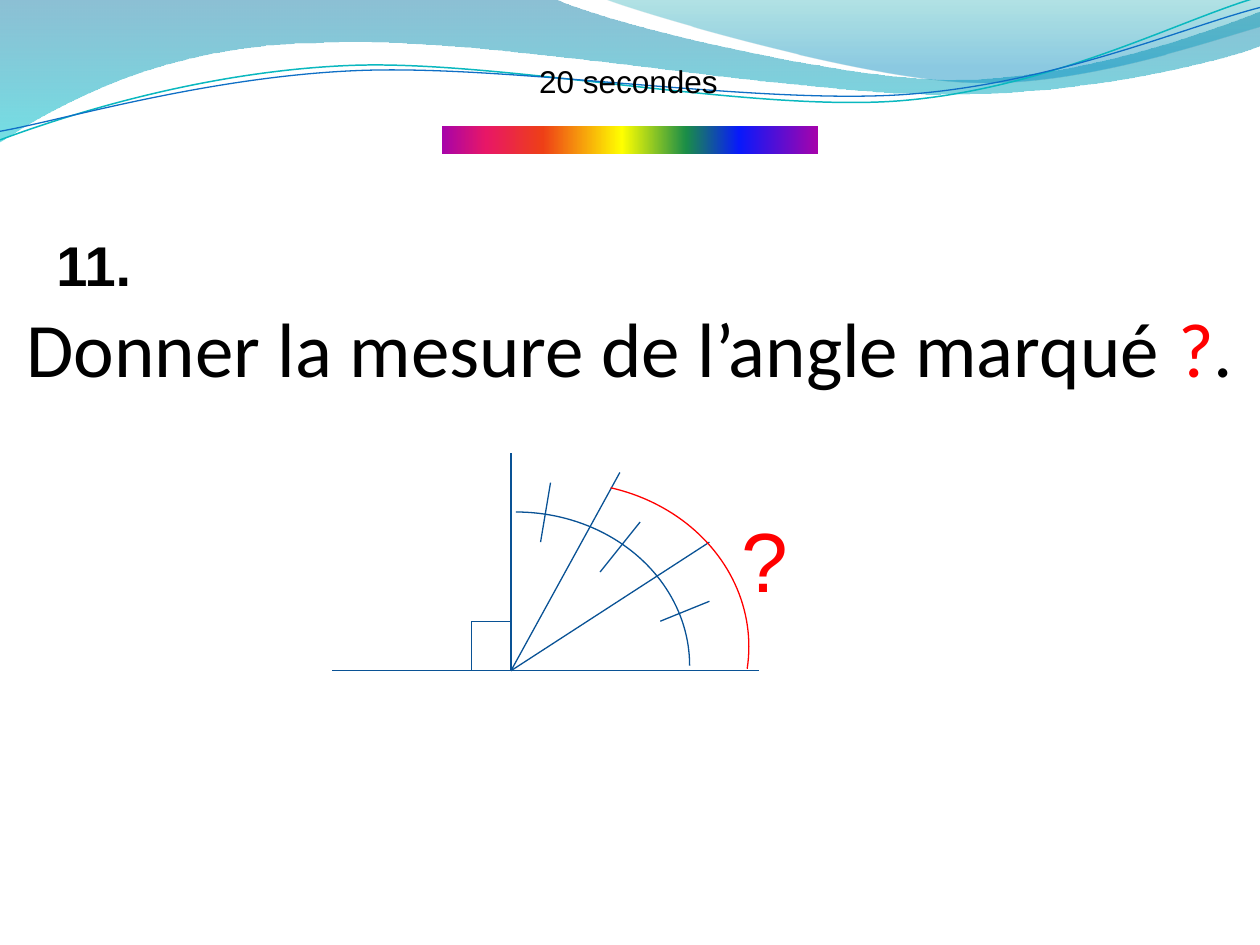
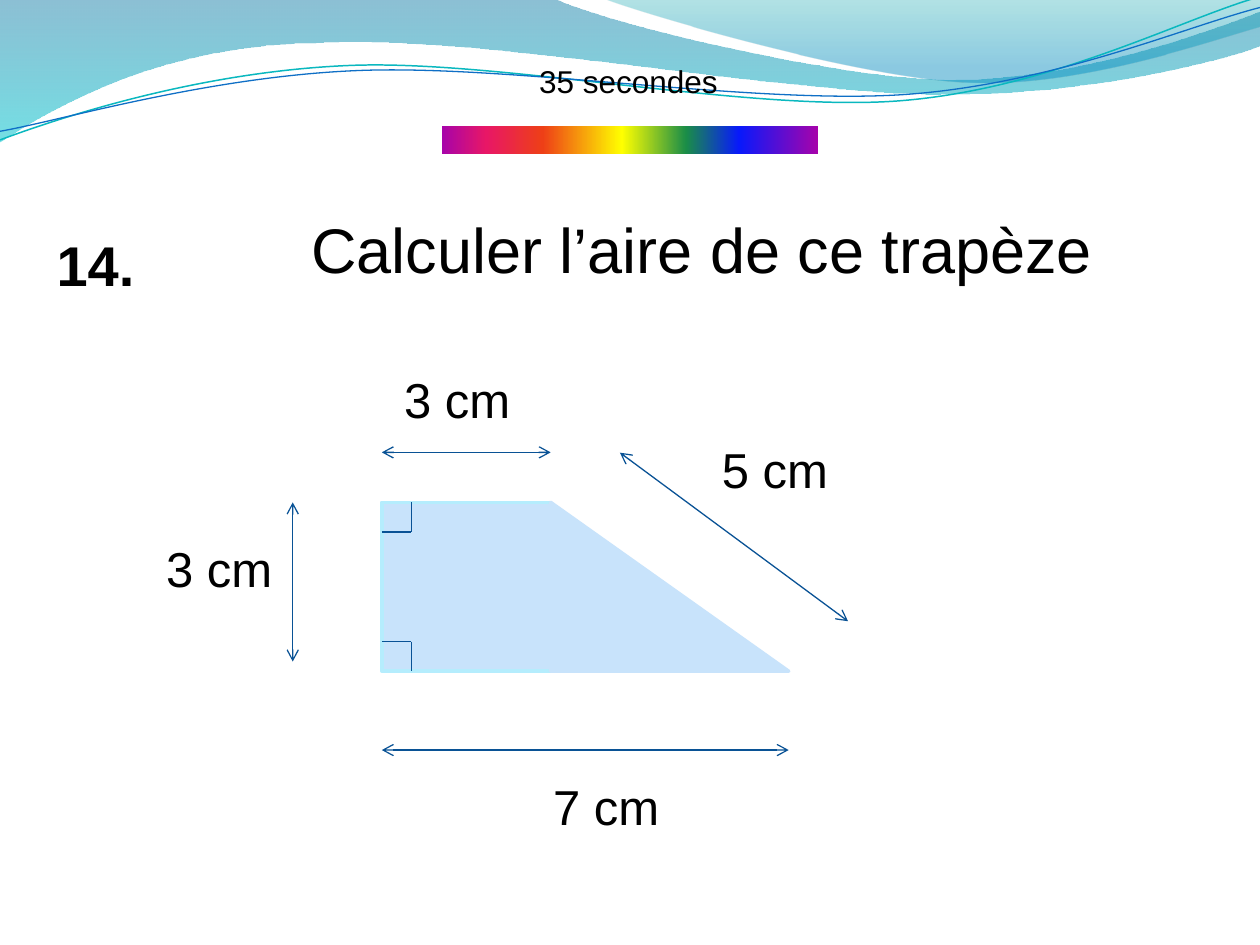
from dataclasses import dataclass
from typing import Any, Optional

import lxml.etree
import pptx
import pptx.dml.color
import pptx.enum.shapes
import pptx.enum.text
import pptx.oxml.ns
import pptx.util

Pt = pptx.util.Pt
Shapes = pptx.enum.shapes.MSO_SHAPE
Align = pptx.enum.text.PP_ALIGN
qn = pptx.oxml.ns.qn

BLACK = "000000"
RED = "FF0000"
NAVY = "095295"
PALE_BLUE = "C8E3FB"
PALE_CYAN = "B5EDFD"
WAVE_TILT = 357.3


@dataclass(frozen=True)
class Stop:
    percent: int
    tone: str
    opacity: int = 100


@dataclass(frozen=True)
class Wave:
    start: tuple[float, float]
    segments: list[tuple[float, ...]]
    stops: Optional[list[Stop]] = None
    line: str = NAVY
    weight: float = 0.75


@dataclass(frozen=True)
class Label:
    spans: list[tuple[str, str]]
    left: float
    top: float
    width: float
    height: float
    size: float
    font: str = "Arial"
    bold: bool = False
    align: Align = Align.LEFT


@dataclass(frozen=True)
class Stroke:
    start: tuple[float, float]
    end: tuple[float, float]
    arrows: bool = False


@dataclass(frozen=True)
class Figure:
    kind: Shapes
    left: float
    top: float
    width: float
    height: float
    line: str
    weight: float = 0.75
    fill: Optional[str] = None
    stops: Optional[list[Stop]] = None
    adjustments: tuple[float, ...] = ()


BANDS = [
    Wave((0, -0.7), [
        (316.8, -0.7),
        (342.7, 12.2, 478.1, 45.4, 545.8, 45.4),
        (614.2, 45.4, 689.8, 18.7, 720, 6.5),
        (720.7, 25.9),
        (707.8, 31.7, 626.4, 54.7, 537.1, 54),
        (447.8, 54, 275, 20.2, 185, 24.5),
        (92.9, 25.2, 33.1, 59.8, -0.7, 81.4),
        (0, -0.7),
    ], [Stop(0, "0074A1", 45), Stop(100, "00C6CF", 55)]),
    Wave((344.9, -0.7), [
        (366.5, 7.9, 491, 44.6, 553.7, 46.8),
        (616.3, 49.7, 691.9, 23, 720, 15.1),
        (720, 0),
        (344.9, -0.7),
    ], [Stop(0, "00A1A9", 30), Stop(80, "008BBF", 45)]),
]
RIPPLES = [
    Wave((-1.4, 63), [
        (33.8, 51.7, 114.1, 29.4, 199.8, 29.9),
        (284.9, 30.3, 425.8, 67.3, 512.4, 64.9),
        (599, 62.4, 676.5, 25.7, 720.2, 15.5),
    ], line="0AB8BF", weight=0.85),
    Wave((-1.1, 58), [
        (32.9, 53.8, 118.3, 32.5, 204.1, 33),
        (290.6, 33.4, 428.9, 63.1, 515.5, 61.4),
        (601.3, 59.6, 678.5, 30.1, 721.4, 21.3),
    ], line="0F6FC6"),
]
RAINBOW = [
    Stop(0, "A603AB"), Stop(12, "E81766"), Stop(27, "EE3F17"), Stop(48, "FFFF00"),
    Stop(65, "1A8D48"), Stop(79, "0819FB"), Stop(100, "A603AB"),
]
TIMER_BAR = Figure(Shapes.RECTANGLE, 252, 71.5, 215.6, 17, "FFFFFF", stops=RAINBOW)


def colour(code: str) -> pptx.dml.color.RGBColor:
    return pptx.dml.color.RGBColor.from_string(code)


def fill_gradient(shape: Any, stops: list[Stop], angle: float) -> None:
    shape.fill.gradient()
    shape.fill.gradient_angle = angle
    stop_list = next(shape._element.spPr.iter(qn("a:gsLst")))
    for old in list(stop_list):
        stop_list.remove(old)
    for stop in stops:
        node = lxml.etree.SubElement(stop_list, qn("a:gs"), pos=str(stop.percent * 1000))
        tone = lxml.etree.SubElement(node, qn("a:srgbClr"), val=str(colour(stop.tone)))
        if stop.opacity < 100:
            lxml.etree.SubElement(tone, qn("a:alpha"), val=str(stop.opacity * 1000))


def set_line(line: Any, tone: str, weight: float) -> None:
    line.color.rgb = colour(tone)
    line.width = Pt(weight)


def bend_segments(shape: Any, segments: list[tuple[float, ...]]) -> None:
    straights = list(shape._element.spPr.iter(qn("a:lnTo")))
    for straight, segment in zip(straights, segments):
        if len(segment) == 2:
            continue
        curve = lxml.etree.Element(qn("a:cubicBezTo"))
        for x, y in zip(segment[::2], segment[1::2]):
            lxml.etree.SubElement(
                curve, qn("a:pt"), x=str(Pt(x) - shape.left), y=str(Pt(y) - shape.top)
            )
        straight.getparent().replace(straight, curve)


def draw_wave(page: Any, wave: Wave) -> Any:
    builder = page.shapes.build_freeform(*(Pt(value) for value in wave.start), scale=1.0)
    ends = [(Pt(segment[-2]), Pt(segment[-1])) for segment in wave.segments]
    builder.add_line_segments(ends, close=wave.stops is not None)
    shape = builder.convert_to_shape()
    bend_segments(shape, wave.segments)
    shape.shadow.inherit = False
    if wave.stops:
        fill_gradient(shape, wave.stops, 270)
        shape.line.fill.background()
    else:
        shape.fill.background()
        set_line(shape.line, wave.line, wave.weight)
        shape.rotation = WAVE_TILT
    return shape


def decorate_layout(layout: Any, page: Any) -> None:
    art = [draw_wave(page, band) for band in BANDS]
    ripples = [draw_wave(page, ripple) for ripple in RIPPLES]
    art.append(page.shapes.add_group_shape(ripples))
    for shape in art:
        layout.shapes._spTree.append(shape._element)


def draw_figure(page: Any, figure: Figure) -> Any:
    shape = page.shapes.add_shape(
        figure.kind, Pt(figure.left), Pt(figure.top), Pt(figure.width), Pt(figure.height)
    )
    shape.shadow.inherit = False
    for index, value in enumerate(figure.adjustments):
        shape.adjustments[index] = value
    if figure.stops:
        fill_gradient(shape, figure.stops, 0)
    elif figure.fill:
        shape.fill.solid()
        shape.fill.fore_color.rgb = colour(figure.fill)
    else:
        shape.fill.background()
    set_line(shape.line, figure.line, figure.weight)
    return shape


def draw_stroke(page: Any, stroke: Stroke) -> None:
    connector = page.shapes.add_connector(
        pptx.enum.shapes.MSO_CONNECTOR.STRAIGHT,
        *(Pt(value) for value in stroke.start + stroke.end),
    )
    set_line(connector.line, NAVY, 0.75)
    if stroke.arrows:
        for end in ("a:headEnd", "a:tailEnd"):
            lxml.etree.SubElement(connector.line._get_or_add_ln(), qn(end), type="arrow")
    lxml.etree.SubElement(connector._element.spPr, qn("a:effectLst"))


def draw_label(page: Any, label: Label) -> None:
    box = page.shapes.add_textbox(
        Pt(label.left), Pt(label.top), Pt(label.width), Pt(label.height)
    )
    frame = box.text_frame
    frame.word_wrap = True
    frame.auto_size = pptx.enum.text.MSO_AUTO_SIZE.SHAPE_TO_FIT_TEXT
    para = frame.paragraphs[0]
    para.alignment = label.align
    para.font.name = label.font
    para.font.size = Pt(label.size)
    para.font.bold = label.bold
    for text, tone in label.spans:
        span = para.add_run()
        span.text = text
        span.font.color.rgb = colour(tone)


def draw_header(page: Any, number: str, width: float, duration: str) -> None:
    draw_label(page, Label([(number, BLACK)], 25.2, 128.2, width, 46, 32, bold=True))
    draw_label(page, Label([(duration, BLACK)], 252.2, 31.7, 213.8, 28.8, 18,
                           align=Align.CENTER))
    draw_figure(page, TIMER_BAR)


def build_angle_page(page: Any) -> None:
    draw_label(page, Label(
        [("Donner la mesure de l’angle marqué ", BLACK), ("?", RED), (".", BLACK)],
        0, 168, 720, 60.5, 44, font="Calibri", align=Align.CENTER,
    ))
    draw_header(page, "11.", 67.7, "20 secondes")
    vertex = (292, 383.3)
    ray_ends = [(292, 258.7), (433.7, 383.3), (189.8, 383.3), (354.2, 270), (405.4, 309.8)]
    right_angle = [(292, 355), (269.3, 355), (269.3, 383.3)]
    equal_marks = [
        Stroke((377.3, 355), (405.4, 343.6)),
        Stroke((342.9, 326.9), (365.8, 298.3)),
        Stroke((308.9, 309.8), (314.6, 275.8)),
    ]
    strokes = [Stroke(vertex, end) for end in ray_ends]
    strokes += [Stroke(*pair) for pair in zip(right_angle, right_angle[1:])]
    for stroke in strokes:
        draw_stroke(page, stroke)
    draw_figure(page, Figure(Shapes.ARC, 195.6, 292.6, 198.5, 175.7, NAVY))
    for mark in equal_marks:
        draw_stroke(page, mark)
    draw_figure(page, Figure(Shapes.ARC, 218.4, 275.9, 209.5, 187.2, RED,
                             adjustments=(171.53, 4.18)))
    draw_label(page, Label([("?", RED)], 416.9, 287.3, 39.6, 65.5, 48))


def build_trapezoid_page(page: Any) -> None:
    draw_label(page, Label([("Calculer l’aire de ce trapèze", BLACK)],
                           82.1, 116.6, 637.9, 51.1, 36, align=Align.CENTER))
    draw_header(page, "14.", 73.4, "35 secondes")
    left, top, side, overhang = 218.2, 287.1, 96.5, 136
    middle, bottom = left + side, top + side
    right = middle + overhang
    page.shapes.add_group_shape([
        draw_figure(page, Figure(Shapes.RECTANGLE, left, top, side, side,
                                 PALE_CYAN, 2, PALE_BLUE)),
        draw_figure(page, Figure(Shapes.RIGHT_TRIANGLE, middle, top, overhang, side,
                                 PALE_BLUE, 2, PALE_BLUE)),
    ])
    for start, end in [
        ((167.3, top), (167.3, 378)),
        ((left, 258.5), (middle, 258.5)),
        ((354.3, 258.7), (484.6, 355)),
        ((left, 428.6), (right, 428.6)),
    ]:
        draw_stroke(page, Stroke(start, end, arrows=True))
    for text, x, y, width in [
        ("5 cm", 405.4, 247.7, 85),
        ("7 cm", 309, 439.9, 79.2),
        ("3 cm", 87.9, 304.1, 79.2),
        ("3 cm", 223.9, 207.4, 79.2),
    ]:
        draw_label(page, Label([(text, BLACK)], x, y, width, 41, 28))
    mark = 16.9
    for edge, inner in [(top, top + mark), (bottom, bottom - mark)]:
        corner = (left + mark, inner)
        draw_stroke(page, Stroke((left, inner), corner))
        draw_stroke(page, Stroke(corner, (left + mark, edge)))


def main() -> None:
    deck = pptx.Presentation()
    deck.slide_width, deck.slide_height = Pt(720), Pt(540)
    blank = next(layout for layout in deck.slide_layouts if layout.name == "Blank")
    angle_page, trapezoid_page = (deck.slides.add_slide(blank) for _ in range(2))
    decorate_layout(blank, angle_page)
    build_angle_page(angle_page)
    build_trapezoid_page(trapezoid_page)
    deck.save("out.pptx")


if __name__ == "__main__":
    main()
